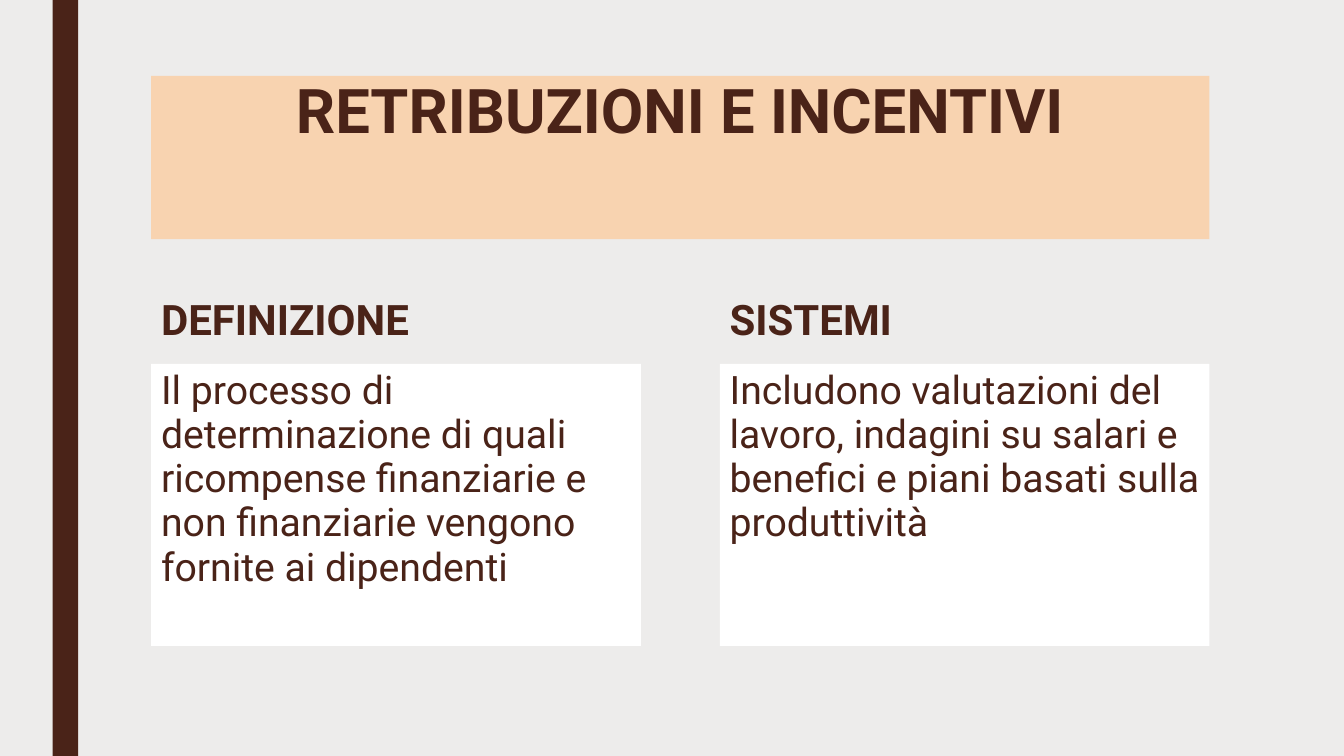
import dataclasses

import pptx
import pptx.dml.color
import pptx.enum.shapes
import pptx.enum.text
import pptx.util

Cm = pptx.util.Cm
Align = pptx.enum.text.PP_ALIGN
Anchor = pptx.enum.text.MSO_ANCHOR


@dataclasses.dataclass(frozen=True)
class Theme:
    font: str = "Roboto"
    background: str = "EDECEB"
    brown: str = "4A2318"
    peach: str = "F8D3B0"
    white: str = "FFFFFF"
    title_size: int = 44
    heading_size: int = 30
    body_size: int = 28


class SlideBuilder:
    def __init__(self, slide, theme):
        self.slide = slide
        self.theme = theme

    def paint(self, fill, color):
        fill.solid()
        fill.fore_color.rgb = pptx.dml.color.RGBColor.from_string(color)

    def background(self):
        self.paint(self.slide.background.fill, self.theme.background)

    def panel(self, left, top, width, height, color):
        shape = self.slide.shapes.add_shape(
            pptx.enum.shapes.MSO_SHAPE.RECTANGLE, Cm(left), Cm(top), Cm(width), Cm(height))
        shape.shadow.inherit = False
        shape.line.fill.background()
        self.paint(shape.fill, color)
        return shape

    def set_text(self, box, text, size, spacing, bold=False, align=Align.LEFT, anchor=Anchor.TOP):
        frame = box.text_frame
        frame.text = text
        frame.word_wrap = True
        frame.vertical_anchor = anchor
        para = frame.paragraphs[0]
        para.alignment = align
        para.line_spacing = spacing
        for span in para.runs:
            span.font.name = self.theme.font
            span.font.size = pptx.util.Pt(size)
            span.font.bold = bold
            span.font.color.rgb = pptx.dml.color.RGBColor.from_string(self.theme.brown)

    def title(self, left, top, width, height, text):
        box = self.panel(left, top, width, height, self.theme.peach)
        self.set_text(box, text, self.theme.title_size, 0.89, bold=True, align=Align.CENTER)

    def heading(self, left, top, width, height, text):
        box = self.slide.shapes.add_textbox(Cm(left), Cm(top), Cm(width), Cm(height))
        self.set_text(box, text, self.theme.heading_size, 0.84, bold=True, anchor=Anchor.BOTTOM)

    def body(self, left, top, width, height, text):
        box = self.panel(left, top, width, height, self.theme.white)
        self.set_text(box, text, self.theme.body_size, 0.94)


COLUMNS = [
    ("DEFINIZIONE",
     "Il processo di determinazione di quali ricompense finanziarie e non finanziarie "
     "vengono fornite ai dipendenti"),
    ("SISTEMI",
     "Includono valutazioni del lavoro, indagini su salari e benefici e piani basati "
     "sulla produttività"),
]


def main():
    deck = pptx.Presentation()
    deck.slide_width, deck.slide_height = Cm(33.87), Cm(19.05)
    theme = Theme()
    page = SlideBuilder(deck.slides.add_slide(deck.slide_layouts[6]), theme)

    left, content_width = 3.81, 26.67
    column_width = 12.34
    column_step = content_width - column_width

    page.background()
    page.panel(1.33, 0, 0.64, 19.05, theme.brown)
    page.title(left, 1.91, content_width, 4.12, "RETRIBUZIONI E INCENTIVI")
    for index, (heading, body) in enumerate(COLUMNS):
        column_left = left + index * column_step
        page.heading(column_left, 6.5, column_width, 2.29, heading)
        page.body(column_left, 9.17, column_width, 7.11, body)

    deck.save("out.pptx")


if __name__ == "__main__":
    main()
